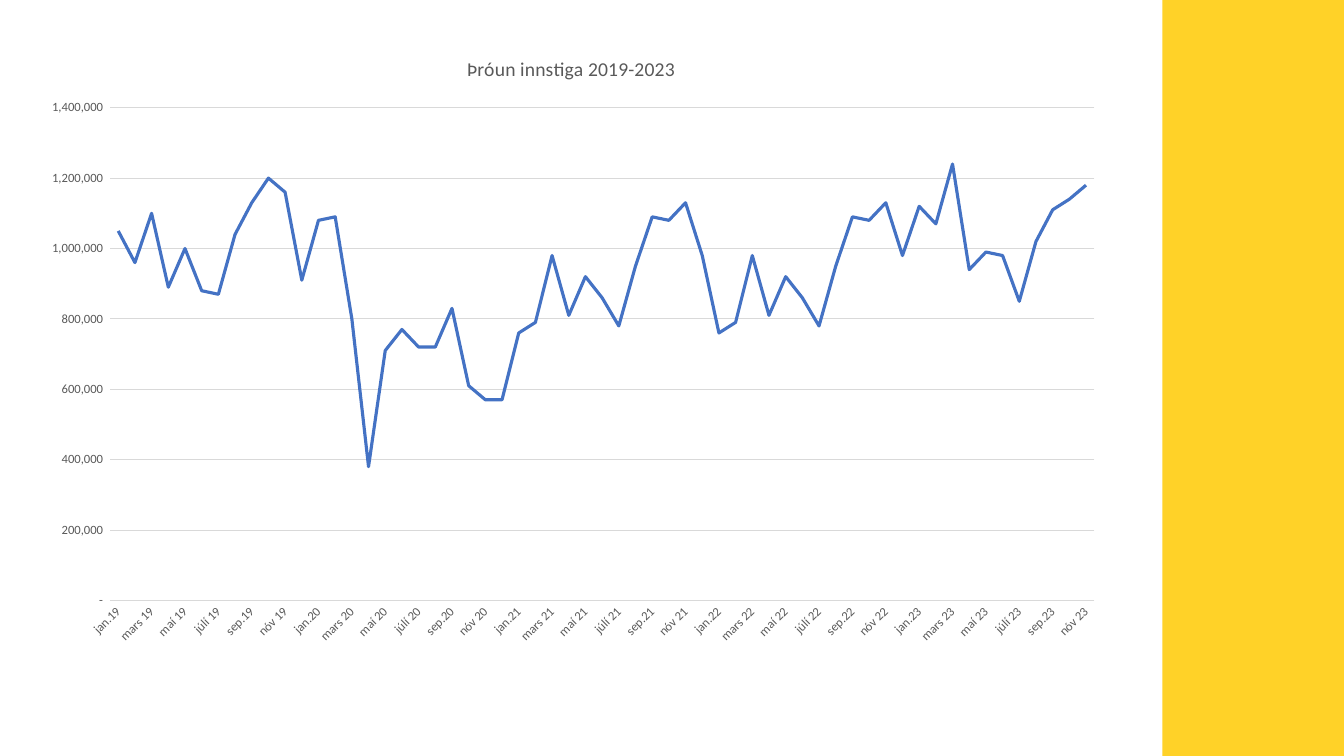
"""Build a slide with a line chart of monthly boardings beside a yellow band."""
from dataclasses import dataclass

from lxml import etree
from pptx import Presentation, util as u
from pptx.chart.data import CategoryChartData
from pptx.dml.color import RGBColor
from pptx.enum import chart as ch, shapes
from pptx.oxml import ns

COLORS = {"band": "FFD228", "series": "4472C4", "label": "595959", "grid": "D9D9D9"}
FONT = "Calibri"
WIDTH, HEIGHT = u.Inches(13.33), u.Inches(7.5)
NUMBER_FORMAT = '_(* #,##0_);_(* \\(#,##0\\);_(* "-"_);_(@_)'
MONTHS = ["jan.", "feb.", "mars ", "apr.", "maí ", "júní ",
          "júlí ", "ágúst ", "sep.", "okt ", "nóv ", "des "]
THOUSANDS = {
    19: [1050, 960, 1100, 890, 1000, 880, 870, 1040, 1130, 1200, 1160, 910],
    20: [1080, 1090, 800, 380, 710, 770, 720, 720, 830, 610, 570, 570],
    21: [760, 790, 980, 810, 920, 860, 780, 950, 1090, 1080, 1130, 980],
    23: [1120, 1070, 1240, 940, 990, 980, 850, 1020, 1110, 1140, 1180],
}
THOUSANDS[22] = THOUSANDS[21]


@dataclass
class Box:
    """Hold a rectangle as shares of its parent's size."""
    x: float
    y: float
    w: float
    h: float

    def on_slide(self) -> tuple:
        """Return the rectangle in slide units."""
        return (int(self.x * WIDTH), int(self.y * HEIGHT),
                int(self.w * WIDTH), int(self.h * HEIGHT))


BAND = Box(11.53 / 13.33, 0, 1.8 / 13.33, 1)
CHART = Box(0.27 / 13.33, 0.34 / 7.5, 10.79 / 13.33, 6.18 / 7.5)
PLOT = Box(0.076, 0.118, 0.905, 0.791)


def rgb(name: str) -> RGBColor:
    """Look up a named colour."""
    return RGBColor.from_string(COLORS[name])


def style_font(font, size: float) -> None:
    """Apply the label typeface."""
    font.name, font.size, font.bold = FONT, u.Pt(size), False
    font.color.rgb = rgb("label")


def style_line(line, color: str, width: float) -> None:
    """Colour a line and set its width."""
    line.color.rgb, line.width = rgb(color), u.Pt(width)


def style_axis(axis) -> None:
    """Remove the ticks and style the labels of an axis."""
    axis.major_tick_mark = axis.minor_tick_mark = ch.XL_TICK_MARK.NONE
    style_font(axis.tick_labels.font, 9)


def place_plot(chart, box: Box) -> None:
    """Fix the inner plot area inside the chart."""
    area = chart._chartSpace.chart.plotArea
    for old in area.findall(ns.qn("c:layout")):
        area.remove(old)
    layout = etree.Element(ns.qn("c:layout"))
    manual = etree.SubElement(layout, ns.qn("c:manualLayout"))
    settings = {"layoutTarget": "inner", "xMode": "edge", "yMode": "edge",
                "x": box.x, "y": box.y, "w": box.w, "h": box.h}
    for tag, value in settings.items():
        etree.SubElement(manual, ns.qn(f"c:{tag}"), val=str(value))
    area.insert(0, layout)


def add_band(s) -> None:
    """Draw the yellow band on the right edge."""
    sp = s.shapes.add_shape(shapes.MSO_SHAPE.RECTANGLE, *BAND.on_slide())
    sp.shadow.inherit = False
    sp.fill.solid()
    sp.fill.fore_color.rgb = rgb("band")
    sp.line.fill.background()


def add_boardings_chart(s) -> None:
    """Draw the line chart of boardings per month."""
    data = CategoryChartData(number_format=NUMBER_FORMAT)
    years = sorted(THOUSANDS)
    data.categories = [f"{month}{year}" for year in years
                       for month, _ in zip(MONTHS, THOUSANDS[year])]
    data.add_series("Series 1", [v * 1000 for year in years for v in THOUSANDS[year]])
    chart = s.shapes.add_chart(ch.XL_CHART_TYPE.LINE, *CHART.on_slide(), data).chart
    style_font(chart.font, 10)
    chart.has_legend = False
    chart.has_title = True
    tf = chart.chart_title.text_frame
    tf.text = "Þróun innstiga 2019-2023"
    style_font(tf.paragraphs[0].runs[0].font, 14)
    chart.chart_title.include_in_layout = False

    months, counts = chart.category_axis, chart.value_axis
    for axis in (months, counts):
        style_axis(axis)
    style_line(months.format.line, "grid", 0.75)
    body = months._element.find(ns.qn("c:txPr")).find(ns.qn("a:bodyPr"))
    body.set("rot", "-2700000")
    body.set("vert", "horz")
    counts.minimum_scale, counts.maximum_scale, counts.major_unit = 0, 1400000, 200000
    counts.tick_labels.number_format = NUMBER_FORMAT
    counts.tick_labels.number_format_is_linked = False
    counts.format.line.fill.background()
    style_line(counts.major_gridlines.format.line, "grid", 0.75)

    plot = chart.plots[0]
    plot.vary_by_categories = False
    series = plot.series[0]
    series.smooth = False
    series.marker.style = ch.XL_MARKER_STYLE.NONE
    style_line(series.format.line, "series", 2.25)
    place_plot(chart, PLOT)


def main() -> None:
    """Create and save the presentation."""
    prs = Presentation()
    prs.slide_width, prs.slide_height = WIDTH, HEIGHT
    s = prs.slides.add_slide(prs.slide_layouts[6])
    add_band(s)
    add_boardings_chart(s)
    prs.save("out.pptx")


if __name__ == "__main__":
    main()
